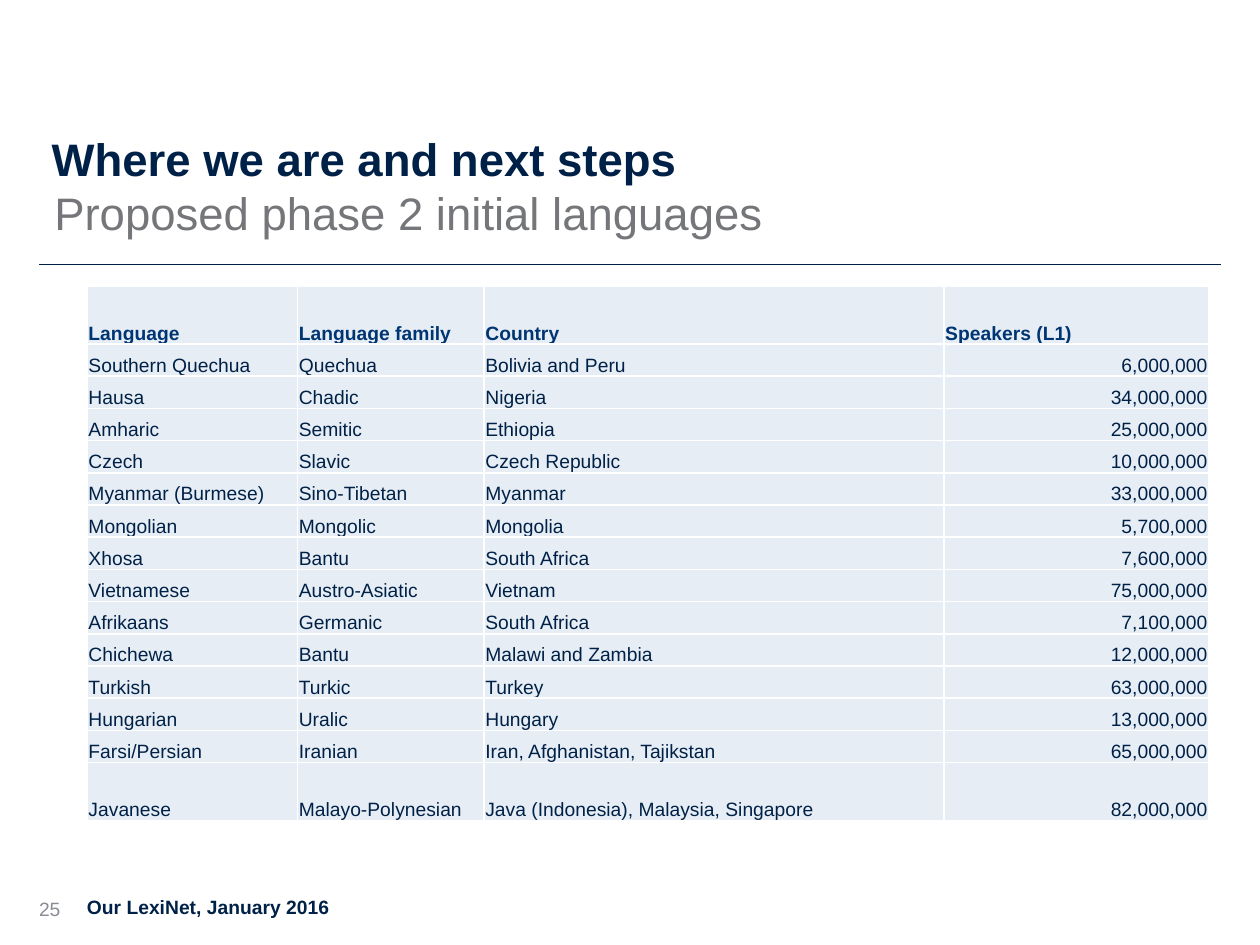
from lxml import etree
from pptx import Presentation
from pptx.dml.color import RGBColor
from pptx.enum.shapes import MSO_CONNECTOR
from pptx.enum.text import MSO_ANCHOR, PP_ALIGN
from pptx.oxml.ns import qn
from pptx.util import Pt

TOP, MIDDLE, BOTTOM = MSO_ANCHOR.TOP, MSO_ANCHOR.MIDDLE, MSO_ANCHOR.BOTTOM
LEFT, RIGHT = PP_ALIGN.LEFT, PP_ALIGN.RIGHT
STRAIGHT = MSO_CONNECTOR.STRAIGHT

COLORS = {
    "navy": "002147",
    "blue": "003573",
    "gray": "747679",
    "number": "898C94",
    "cell": "E7EDF4",
    "border": "FFFFFF",
}
WIDTHS = (120.2, 106.6, 262.8, 151.2)
TALL, SHORT = 33, 18.4
ROWS = (
    ("Language", "Language family", "Country", "Speakers (L1)"),
    ("Southern Quechua", "Quechua", "Bolivia and Peru", "6,000,000"),
    ("Hausa", "Chadic", "Nigeria", "34,000,000"),
    ("Amharic", "Semitic", "Ethiopia", "25,000,000"),
    ("Czech", "Slavic", "Czech Republic", "10,000,000"),
    ("Myanmar (Burmese)", "Sino-Tibetan", "Myanmar", "33,000,000"),
    ("Mongolian", "Mongolic", "Mongolia", "5,700,000"),
    ("Xhosa", "Bantu", "South Africa", "7,600,000"),
    ("Vietnamese", "Austro-Asiatic", "Vietnam", "75,000,000"),
    ("Afrikaans", "Germanic", "South Africa", "7,100,000"),
    ("Chichewa", "Bantu", "Malawi and Zambia", "12,000,000"),
    ("Turkish", "Turkic", "Turkey", "63,000,000"),
    ("Hungarian", "Uralic", "Hungary", "13,000,000"),
    ("Farsi/Persian", "Iranian", "Iran, Afghanistan, Tajikstan", "65,000,000"),
    ("Javanese", "Malayo-Polynesian", "Java (Indonesia), Malaysia, Singapore",
     "82,000,000"),
)


def color(name):
    return RGBColor.from_string(COLORS[name])


def write(frame, text, size, ink, bold=False, align=LEFT):
    frame.text = text
    para = frame.paragraphs[0]
    para.alignment = align
    font = para.font
    font.name, font.size, font.bold = "Arial", Pt(size), bold
    font.color.rgb = color(ink)


def inset(item, left, top, right, bottom):
    """Set the margins of a text frame or a table cell."""
    item.margin_left, item.margin_top = Pt(left), Pt(top)
    item.margin_right, item.margin_bottom = Pt(right), Pt(bottom)


def add_title(slide, text):
    title = slide.shapes.title
    title.left, title.top = Pt(22.3), Pt(69.8)
    title.width, title.height = Pt(516), Pt(39)
    frame = title.text_frame
    frame.word_wrap = True
    frame.vertical_anchor = TOP
    inset(frame, 7.2, 5.2, 7.2, 0)
    write(frame, text, 26, "navy", True)


def add_text(slide, text, box, size, ink, bold=False, anchor=MIDDLE, top=0):
    shape = slide.shapes.add_textbox(*map(Pt, box))
    frame = shape.text_frame
    frame.word_wrap = True
    frame.vertical_anchor = anchor
    inset(frame, 0, top, 0, 0)
    write(frame, text, size, ink, bold)


def add_rule(slide, left, right, y):
    rule = slide.shapes.add_connector(STRAIGHT, Pt(left), Pt(y), Pt(right), Pt(y))
    rule.line.color.rgb = color("navy")
    rule.line.width = Pt(0.6)
    etree.SubElement(rule._element.spPr, qn("a:effectLst"))


def add_borders(cell):
    props = cell._tc.get_or_add_tcPr()
    for side in ("lnL", "lnR", "lnT", "lnB"):
        edge = etree.SubElement(props, qn(f"a:{side}"), w=str(Pt(1)))
        fill = etree.SubElement(edge, qn("a:solidFill"))
        etree.SubElement(fill, qn("a:srgbClr"), val=COLORS["border"])


def add_grid(slide, left, top):
    heights = [TALL] + [SHORT] * (len(ROWS) - 2) + [TALL]
    box = map(Pt, (left, top, sum(WIDTHS), sum(heights)))
    table = slide.shapes.add_table(len(ROWS), len(WIDTHS), *box).table
    table.first_row = table.horz_banding = False
    for col, width in zip(table.columns, WIDTHS):
        col.width = Pt(width)
    for row, height in zip(table.rows, heights):
        row.height = Pt(height)
    for r, values in enumerate(ROWS):
        head = r == 0
        for c, value in enumerate(values):
            cell = table.cell(r, c)
            add_borders(cell)
            cell.fill.solid()
            cell.fill.fore_color.rgb = color("cell")
            cell.vertical_anchor = BOTTOM
            inset(cell, 0.7, 0.7, 0.7, 0)
            align = RIGHT if c == 3 and not head else LEFT
            write(cell.text_frame, value, 11, "blue" if head else "navy", head, align)


def main():
    deck = Presentation()
    deck.slide_width, deck.slide_height = Pt(720), Pt(540)
    slide = deck.slides.add_slide(deck.slide_layouts[5])
    add_rule(slide, 22.5, 697.5, 151)
    add_title(slide, "Where we are and next steps")
    add_text(slide, "Our LexiNet, January 2016", (49.7, 504, 640.8, 28.8),
             11, "navy", True)
    add_text(slide, "25", (22.3, 503.3, 27.4, 28), 11, "number", top=3.6)
    add_text(slide, "Proposed phase 2 initial languages", (31, 100, 546.5, 38.2),
             26, "gray", anchor=TOP, top=6)
    add_grid(slide, 49.9, 163.6)
    deck.save("out.pptx")


if __name__ == "__main__":
    main()
